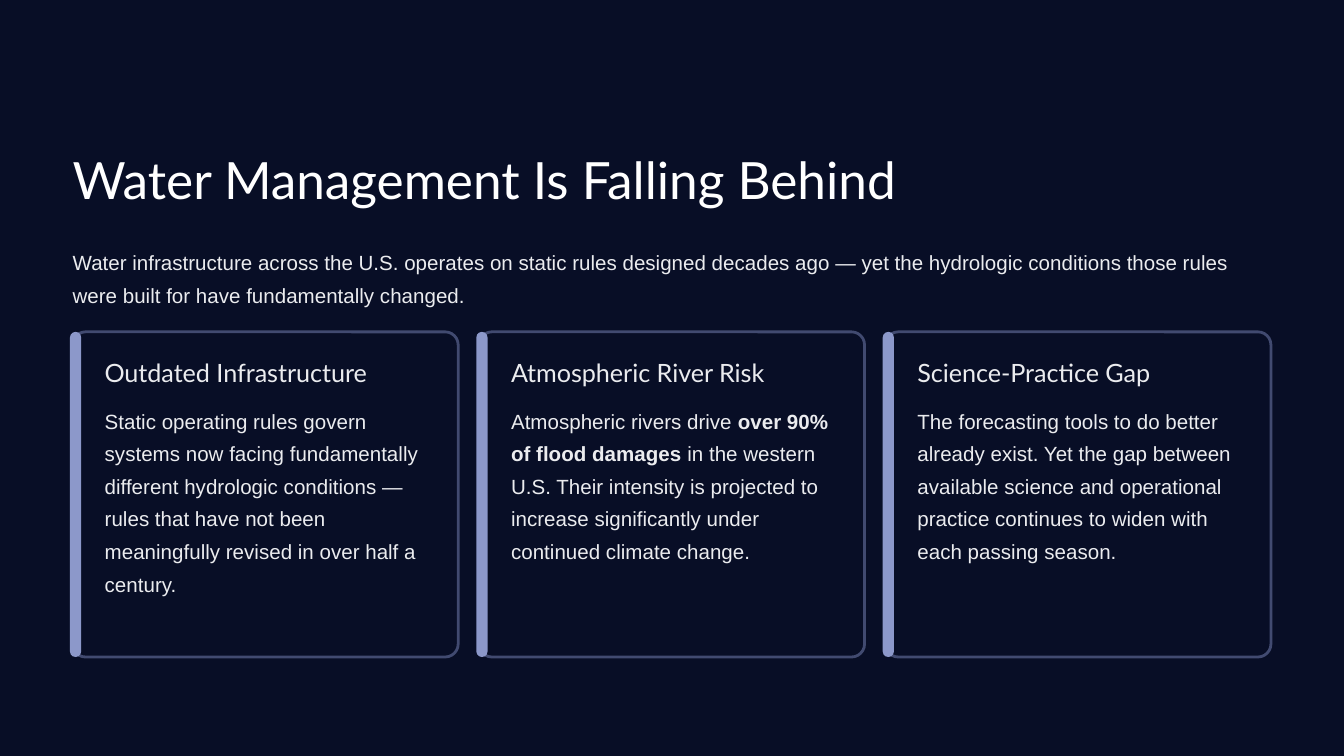
from pptx import Presentation
from pptx import util as u
from pptx.dml.color import RGBColor
from pptx.enum import shapes, text

NAVY = RGBColor(0x08, 0x0E, 0x26)
SLATE = RGBColor(0x41, 0x4A, 0x70)
PERIWINKLE = RGBColor(0x8C, 0x98, 0xCA)
WHITE = RGBColor(0xFF, 0xFF, 0xFF)
MIST = RGBColor(0xEB, 0xEC, 0xEF)

CARD_LEFT, CARD_TOP = 38.9, 177.8
CARD_WIDTH, CARD_HEIGHT = 206.6, 174.2
CARD_PITCH = 217.7

CARDS = [
    ("Outdated Infrastructure", [
        ("Static operating rules govern systems now facing fundamentally "
         "different hydrologic conditions — rules that have not been "
         "meaningfully revised in over half a century.", False)]),
    ("Atmospheric River Risk", [
        ("Atmospheric rivers drive ", False),
        ("over 90% of flood damages", True),
        (" in the western U.S. Their intensity is projected to increase "
         "significantly under continued climate change.", False)]),
    ("Science-Practice Gap", [
        ("The forecasting tools to do better already exist. Yet the gap "
         "between available science and operational practice continues to "
         "widen with each passing season.", False)]),
]


class SlideBuilder:
    heading_font = "Lato"
    body_font = "Arial"

    def __init__(self, slide):
        self.slide = slide
        fill = slide.background.fill
        fill.solid()
        fill.fore_color.rgb = NAVY

    def text_box(self, area, spans, font, size, spacing, color, wrap):
        box = self.slide.shapes.add_textbox(*map(u.Pt, area))
        frame = box.text_frame
        frame.margin_left = frame.margin_right = 0
        frame.margin_top = frame.margin_bottom = 0
        frame.vertical_anchor = text.MSO_ANCHOR.TOP
        frame.word_wrap = wrap
        para = frame.paragraphs[0]
        para.line_spacing = u.Pt(spacing)
        para.font.name = font
        para.font.size = u.Pt(size)
        para.font.color.rgb = color
        for words, bold in spans:
            span = para.add_run()
            span.text = words
            if bold:
                span.font.bold = True

    def heading(self, area, words, size, spacing, color):
        self.text_box(area, [(words, False)], self.heading_font, size,
                      spacing, color, False)

    def body(self, area, spans):
        self.text_box(area, spans, self.body_font, 11, 17.5, MIST, True)

    def rounded(self, area, radius, fill, line=None):
        shape = self.slide.shapes.add_shape(
            shapes.MSO_SHAPE.ROUNDED_RECTANGLE, *map(u.Pt, area))
        shape.shadow.inherit = False
        shape.adjustments[0] = radius
        shape.fill.solid()
        shape.fill.fore_color.rgb = fill
        if line is None:
            shape.line.fill.background()
        else:
            shape.line.color.rgb = line
            shape.line.width = u.Pt(1.5)

    def card(self, left, title, spans):
        self.rounded((left, CARD_TOP, CARD_WIDTH, CARD_HEIGHT), 0.04, NAVY, SLATE)
        self.rounded((left - 1.4, CARD_TOP, 6, CARD_HEIGHT), 0.5, PERIWINKLE)
        text_left = left + 17.2
        self.heading((text_left, 190.8, 161, 17), title, 13.5, 17, MIST)
        self.body((text_left, 214.6, 176.4, 125), spans)


def main():
    deck = Presentation()
    deck.slide_width, deck.slide_height = u.Pt(720), u.Pt(405)
    page = SlideBuilder(deck.slides.add_slide(deck.slide_layouts[6]))
    page.heading((38.9, 77.8, 490, 34.5), "Water Management Is Falling Behind",
                 27.5, 34.5, WHITE)
    page.body((38.9, 129.6, 641.5, 36), [
        ("Water infrastructure across the U.S. operates on static rules "
         "designed decades ago — yet the hydrologic conditions those rules "
         "were built for have fundamentally changed.", False)])
    for index, (title, spans) in enumerate(CARDS):
        page.card(CARD_LEFT + index * CARD_PITCH, title, spans)
    deck.save("out.pptx")


if __name__ == "__main__":
    main()
